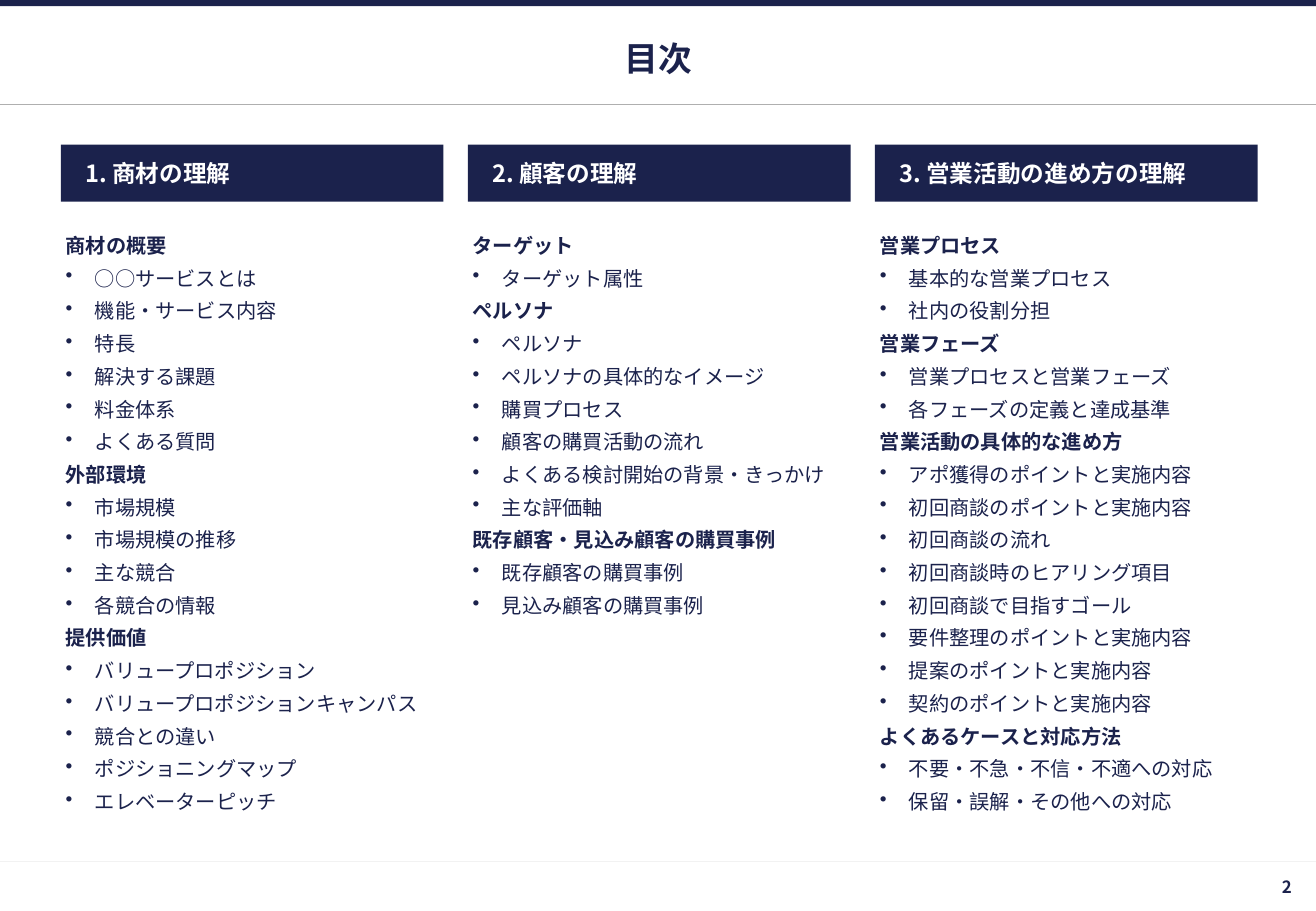
from lxml import etree
from pptx import Presentation
from pptx import util as u
from pptx.dml.color import RGBColor
from pptx.enum import shapes, text
from pptx.oxml.ns import qn

WIDTH, HEIGHT = 10.83, 7.5
MARGIN, GAP = 0.5, 0.2
COLUMN_WIDTH = 3.15
HEADER_TOP, HEADER_HEIGHT = 1.19, 0.47
LIST_TOP, LIST_HEIGHT = 1.88, 4.92
INSET, HANGING = 0.04, 0.24
FONT = "Noto Sans CJK JP"
COLORS = {"navy": "1B224C", "white": "FFFFFF", "rule": "AFAFAF", "footer_rule": "F2F2F2"}

CONTENTS = [
    ("1. 商材の理解", [
        ("商材の概要", ["○○サービスとは", "機能・サービス内容", "特長", "解決する課題",
                   "料金体系", "よくある質問"]),
        ("外部環境", ["市場規模", "市場規模の推移", "主な競合", "各競合の情報"]),
        ("提供価値", ["バリュープロポジション", "バリュープロポジションキャンパス",
                  "競合との違い", "ポジショニングマップ", "エレベーターピッチ"]),
    ]),
    ("2. 顧客の理解", [
        ("ターゲット", ["ターゲット属性"]),
        ("ペルソナ", ["ペルソナ", "ペルソナの具体的なイメージ", "購買プロセス",
                  "顧客の購買活動の流れ", "よくある検討開始の背景・きっかけ", "主な評価軸"]),
        ("既存顧客・見込み顧客の購買事例", ["既存顧客の購買事例", "見込み顧客の購買事例"]),
    ]),
    ("3. 営業活動の進め方の理解", [
        ("営業プロセス", ["基本的な営業プロセス", "社内の役割分担"]),
        ("営業フェーズ", ["営業プロセスと営業フェーズ", "各フェーズの定義と達成基準"]),
        ("営業活動の具体的な進め方", [
            "アポ獲得のポイントと実施内容", "初回商談のポイントと実施内容", "初回商談の流れ",
            "初回商談時のヒアリング項目", "初回商談で目指すゴール",
            "要件整理のポイントと実施内容", "提案のポイントと実施内容", "契約のポイントと実施内容"]),
        ("よくあるケースと対応方法", ["不要・不急・不信・不適への対応", "保留・誤解・その他への対応"]),
    ]),
]


def color(name):
    return RGBColor.from_string(COLORS[name])


def inches(*lengths):
    return [u.Inches(length) for length in lengths]


def add_run(paragraph, words, size, bold=True, fill="navy"):
    run = paragraph.add_run()
    run.text = words
    run.font.size = u.Pt(size)
    run.font.bold = bold
    run.font.color.rgb = color(fill)
    run.font.name = FONT
    etree.SubElement(run.font._element, qn("a:ea"), typeface=FONT)


def set_frame(shape, left=INSET, right=INSET, anchor=text.MSO_ANCHOR.MIDDLE):
    frame = shape.text_frame
    frame.word_wrap = True
    frame.vertical_anchor = anchor
    frame.margin_left, frame.margin_right = inches(left, right)
    frame.margin_top = frame.margin_bottom = u.Inches(INSET)
    return frame


def add_label(slide, box, words, size, align, right=INSET):
    frame = set_frame(slide.shapes.add_textbox(*inches(*box)), right=right)
    frame.paragraphs[0].alignment = align
    add_run(frame.paragraphs[0], words, size)


def add_bar(slide, box):
    bar = slide.shapes.add_shape(shapes.MSO_SHAPE.RECTANGLE, *inches(*box))
    bar.shadow.inherit = False
    bar.fill.solid()
    bar.fill.fore_color.rgb = color("navy")
    bar.line.fill.background()
    return bar


def add_rule(slide, top, name):
    rule = slide.shapes.add_connector(
        shapes.MSO_CONNECTOR.STRAIGHT, *inches(0, top, WIDTH, top))
    rule.line.color.rgb = color(name)
    rule.line.width = u.Pt(0.75)
    etree.SubElement(rule._element.spPr, qn("a:effectLst"))


def add_bullet(paragraph):
    properties = paragraph._p.get_or_add_pPr()
    properties.set("marL", str(u.Inches(HANGING)))
    properties.set("indent", str(-u.Inches(HANGING)))
    bullet_color = etree.SubElement(properties, qn("a:buClr"))
    etree.SubElement(bullet_color, qn("a:srgbClr"), val=COLORS["navy"])
    etree.SubElement(properties, qn("a:buChar"), char="•")


def add_frame(slide):
    """Draw the title band and the footer."""
    add_rule(slide, 7.09, "footer_rule")
    add_bar(slide, (0, 0, WIDTH, 0.05))
    add_rule(slide, 0.86, "rule")
    add_label(slide, (MARGIN, 0.26, 9.84, 0.43), "目次", 20, text.PP_ALIGN.CENTER)
    add_label(slide, (WIDTH - 1.94, 7.1, 1.94, HEIGHT - 7.1), "2", 10,
              text.PP_ALIGN.RIGHT, right=0.2)


def add_header(slide, box, words):
    frame = set_frame(add_bar(slide, box), left=0.2)
    frame.paragraphs[0].alignment = text.PP_ALIGN.LEFT
    add_run(frame.paragraphs[0], words, 14, fill="white")


def add_topics(slide, box, topics):
    frame = set_frame(slide.shapes.add_textbox(*inches(*box)), anchor=text.MSO_ANCHOR.TOP)
    lines = [(words, position == 0) for topic, items in topics
             for position, words in enumerate([topic, *items])]
    for index, (words, is_topic) in enumerate(lines):
        paragraph = frame.add_paragraph() if index else frame.paragraphs[0]
        if not is_topic:
            add_bullet(paragraph)
        paragraph.space_after = u.Pt(5)
        add_run(paragraph, words, 12, bold=is_topic)


def add_column(slide, left, heading, topics):
    add_header(slide, (left, HEADER_TOP, COLUMN_WIDTH, HEADER_HEIGHT), heading)
    add_topics(slide, (left, LIST_TOP, COLUMN_WIDTH, LIST_HEIGHT), topics)


def main():
    presentation = Presentation()
    presentation.slide_width, presentation.slide_height = inches(WIDTH, HEIGHT)
    slide = presentation.slides.add_slide(presentation.slide_layouts[6])
    add_frame(slide)
    for index, (heading, topics) in enumerate(CONTENTS):
        add_column(slide, MARGIN + index * (COLUMN_WIDTH + GAP), heading, topics)
    presentation.save("out.pptx")


if __name__ == "__main__":
    main()
